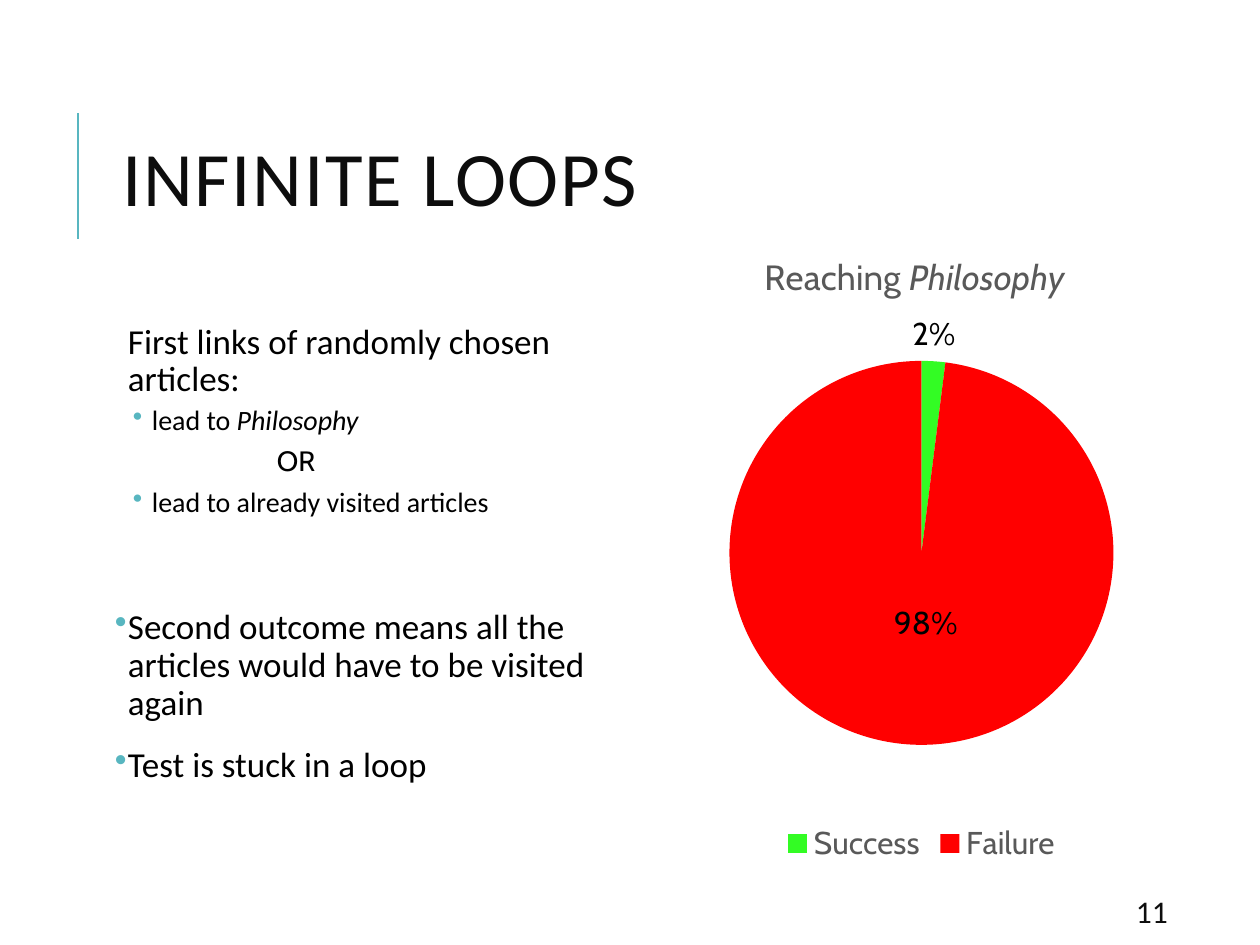
from lxml.etree import SubElement
from pptx import Presentation
from pptx.chart.data import CategoryChartData
from pptx.dml.color import RGBColor
from pptx.enum.chart import XL_CHART_TYPE, XL_LABEL_POSITION, XL_LEGEND_POSITION
from pptx.enum.shapes import MSO_CONNECTOR
from pptx.enum.text import MSO_ANCHOR, MSO_AUTO_SIZE, PP_ALIGN
from pptx.oxml import parse_xml
from pptx.oxml.ns import nsdecls, qn
from pptx.util import Emu, Pt

PX_PER_INCH = 126
TEAL, INK, BLACK, GREY = "58B6C0", "0D0D0D", "000000", "595959"
GREEN, RED = "33FC24", "FF0000"


def px(length):
    return Emu(round(length * 914400 / PX_PER_INCH))


def color(hex_value):
    return RGBColor.from_string(hex_value)


def apply(target, formats):
    for name, value in formats.items():
        setattr(target, name, value)


def style_font(font, size, hex_value, name="Calibri", italic=False):
    apply(font, {"size": Pt(size), "name": name, "italic": italic, "bold": False})
    font.color.rgb = color(hex_value)


def place(shape, box):
    apply(shape, dict(zip(("left", "top", "width", "height"), map(px, box))))


def set_frame(frame, side, anchor):
    apply(frame, {
        "word_wrap": True, "auto_size": MSO_AUTO_SIZE.NONE, "vertical_anchor": anchor,
        "margin_left": px(side), "margin_right": px(side),
        "margin_top": px(9), "margin_bottom": px(9),
    })


def add_run(paragraph, text, **font_format):
    run = paragraph.add_run()
    run.text = text
    style_font(run.font, **font_format)
    return run


def add_heading(slide, box):
    """Title with the accent rule to its left."""
    left, top, _, _ = box
    rule = slide.shapes.add_connector(
        MSO_CONNECTOR.STRAIGHT, *map(px, (left - 28, top + 158, left - 28, top + 32)))
    rule.line.color.rgb = color(TEAL)
    rule.line.width = Pt(1.5)
    SubElement(rule._element.spPr, qn("a:effectLst"))

    title = slide.shapes.title
    place(title, box)
    set_frame(title.text_frame, 16, MSO_ANCHOR.MIDDLE)
    paragraph = title.text_frame.paragraphs[0]
    apply(paragraph, {"alignment": PP_ALIGN.LEFT, "line_spacing": 0.8})
    run = add_run(paragraph, "INFINITE LOOPS", size=44, hex_value=INK)
    run.font._element.set("spc", "100")


def set_bullet(paragraph, indent, hanging, bullet):
    properties = paragraph._p.get_or_add_pPr()
    properties.set("marL", str(px(indent)))
    properties.set("indent", str(-px(hanging)))
    if bullet:
        bullet_color = SubElement(properties, qn("a:buClr"))
        SubElement(bullet_color, qn("a:srgbClr"), val=TEAL)
        SubElement(properties, qn("a:buChar"), char="•")
    else:
        SubElement(properties, qn("a:buNone"))


def add_outcomes(slide, box):
    frame = slide.shapes.add_textbox(*map(px, box)).text_frame
    set_frame(frame, 9, MSO_ANCHOR.TOP)
    main = {"size": 20, "before": 12, "after": 2, "indent": 13, "hanging": 13, "bullet": True}
    sub = {"size": 16, "before": 2, "after": 4, "indent": 37, "hanging": 19, "bullet": True}
    lines = [
        ("First links of randomly chosen articles:", "", main | {"hanging": 0, "bullet": False}),
        ("lead to ", "Philosophy", sub),
        ("OR", "", sub | {"indent": 162, "hanging": 0, "bullet": False, "name": "Cabin"}),
        ("lead to already visited articles", "", sub),
        ("Second outcome means all the articles would have to be visited again", "",
         main | {"before": 48}),
        ("Test is stuck in a loop", "", main),
    ]
    for number, (text, emphasis, look) in enumerate(lines):
        paragraph = frame.add_paragraph() if number else frame.paragraphs[0]
        apply(paragraph, {
            "alignment": PP_ALIGN.LEFT, "line_spacing": 0.9,
            "space_before": Pt(look["before"]), "space_after": Pt(look["after"]),
        })
        set_bullet(paragraph, look["indent"], look["hanging"], look["bullet"])
        font_format = {"size": look["size"], "hex_value": BLACK,
                       "name": look.get("name", "Calibri")}
        add_run(paragraph, text, **font_format)
        if emphasis:
            add_run(paragraph, emphasis, italic=True, **font_format)


def set_layout(parent, after, inner=False, **fractions):
    """Place a chart part by fractions of the chart, after the named sibling."""
    for old in parent.findall(qn("c:layout")):
        parent.remove(old)
    layout = parse_xml(f"<c:layout {nsdecls('c')}><c:manualLayout/></c:layout>")
    manual = layout[0]
    if inner:
        SubElement(manual, qn("c:layoutTarget"), val="inner")
    if after != "c:idx":
        for mode in ("xMode", "yMode"):
            SubElement(manual, qn(f"c:{mode}"), val="edge")
    for name, value in fractions.items():
        SubElement(manual, qn(f"c:{name}"), val=str(value))
    if after:
        parent.find(qn(after)).addnext(layout)
    else:
        parent.insert(0, layout)


def add_success_chart(slide, box):
    data = CategoryChartData(number_format="0%")
    data.categories = ["Success", "Failure"]
    data.add_series("Series 1", (0.02, 0.98))
    chart = slide.shapes.add_chart(XL_CHART_TYPE.PIE, *map(px, box), data).chart
    style_font(chart.font, 10, BLACK, "Cabin")

    chart.has_title = True
    heading = chart.chart_title.text_frame.paragraphs[0]
    add_run(heading, "Reaching ", size=20, hex_value=GREY, name="Cabin")
    add_run(heading, "Philosophy", size=20, hex_value=GREY, name="Cabin", italic=True)
    set_layout(chart.chart_title._element, "c:tx", x=0.19, y=0.04)

    chart.has_legend = True
    apply(chart.legend, {"position": XL_LEGEND_POSITION.BOTTOM, "include_in_layout": False})
    style_font(chart.legend.font, 18, GREY, "Cabin")

    plot = chart.plots[0]
    plot.vary_by_categories = True
    series = plot.series[0]
    labels = series.data_labels
    apply(labels, {"show_value": True, "show_percentage": False, "number_format": "0%",
                   "number_format_is_linked": False})
    style_font(labels.font, 18, BLACK, "Cabin")
    slices = [(GREEN, XL_LABEL_POSITION.OUTSIDE_END), (RED, XL_LABEL_POSITION.CENTER)]
    for index, (fill, position) in enumerate(slices):
        point = series.points[index]
        point.format.fill.solid()
        point.format.fill.fore_color.rgb = color(fill)
        point.format.line.fill.background()
        point.data_label.position = position
        style_font(point.data_label.font, 18, BLACK, "Cabin")
    failure_label = series._element.findall(".//" + qn("c:dLbl"))[1]
    set_layout(failure_label, "c:idx", x=0.02, y=-0.04)
    plot_area = chart._chartSpace.find(".//" + qn("c:plotArea"))
    set_layout(plot_area, None, inner=True, x=0.13, y=0.21, w=0.74, h=0.6)


def add_page_number(slide, box):
    frame = slide.shapes.add_textbox(*map(px, box)).text_frame
    set_frame(frame, 16, MSO_ANCHOR.MIDDLE)
    add_run(frame.paragraphs[0], "11", size=18, hex_value=INK)


def main():
    deck = Presentation()
    apply(deck, {"slide_width": px(1260), "slide_height": px(945)})
    slide = deck.slides.add_slide(deck.slide_layouts[5])
    add_heading(slide, (106, 81, 1004, 207))
    add_outcomes(slide, (106, 315, 491, 554))
    add_success_chart(slide, (662, 224, 519, 645))
    add_page_number(slide, (1120, 892, 101, 38))
    deck.save("out.pptx")


if __name__ == "__main__":
    main()
